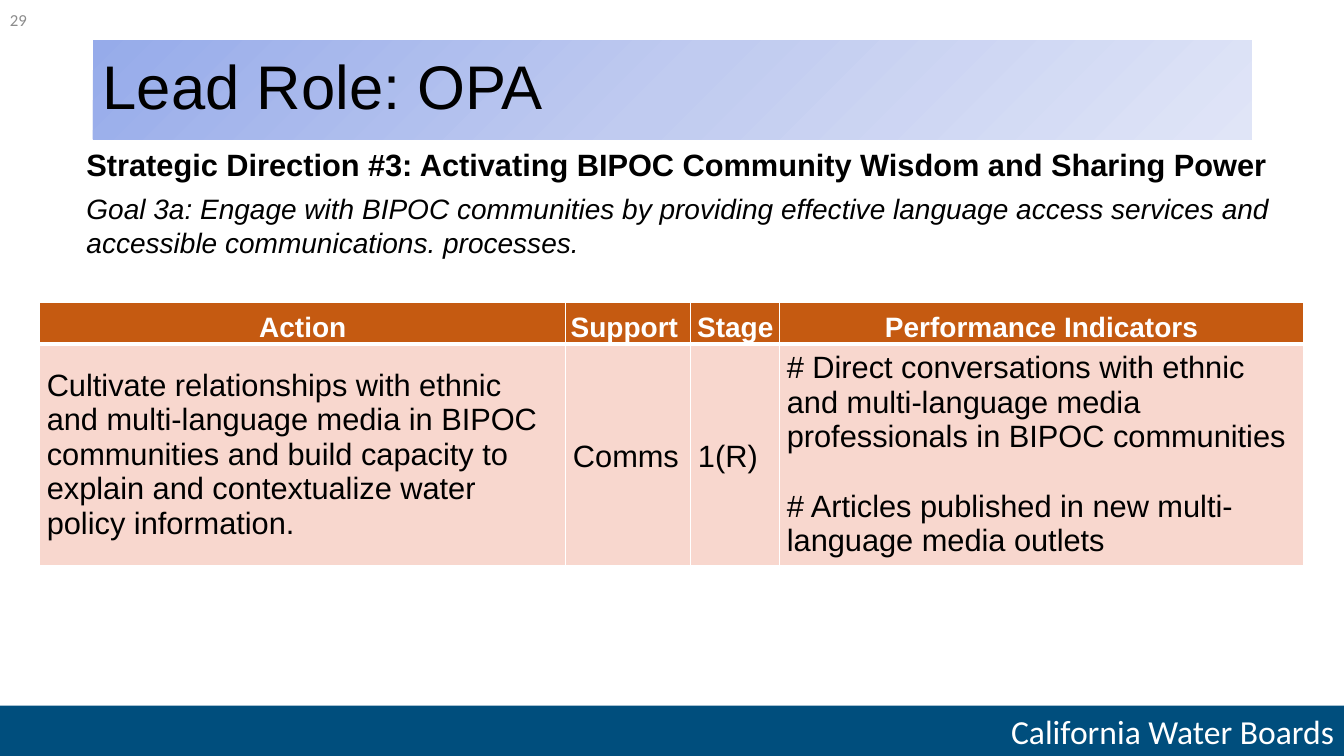
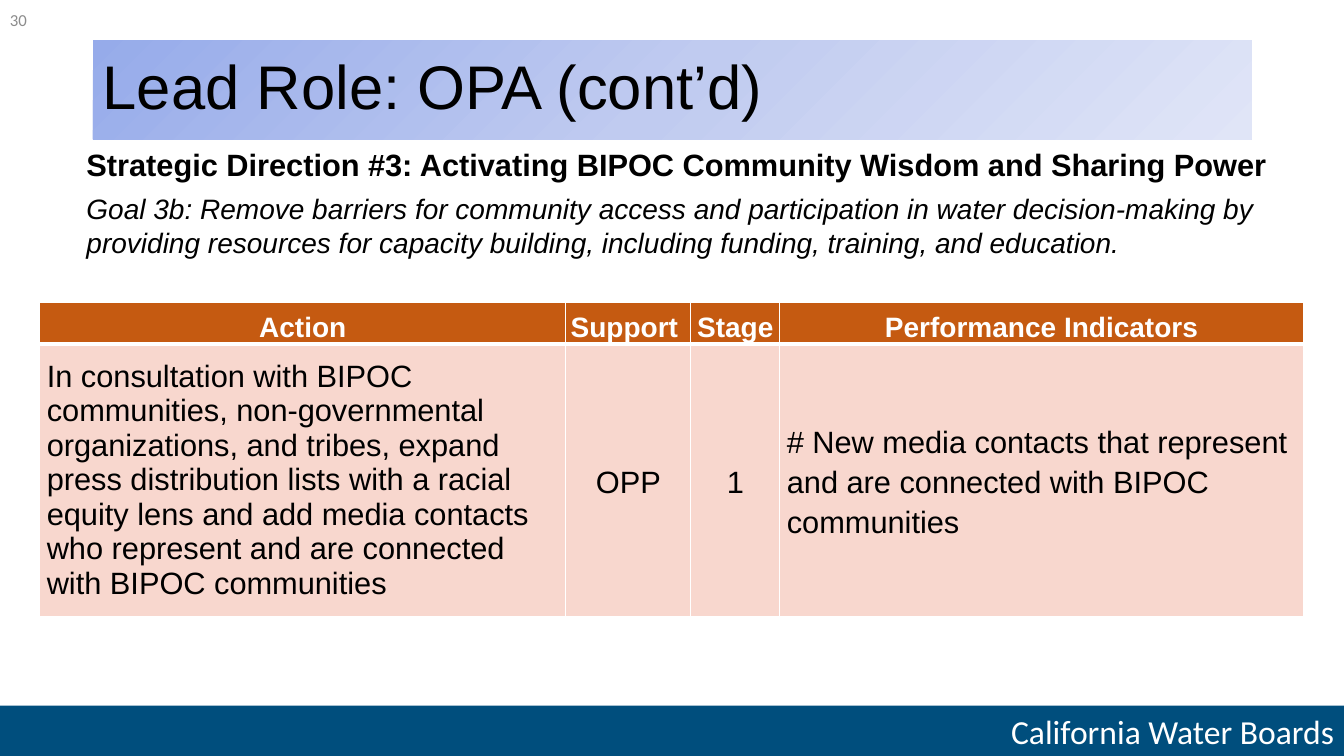
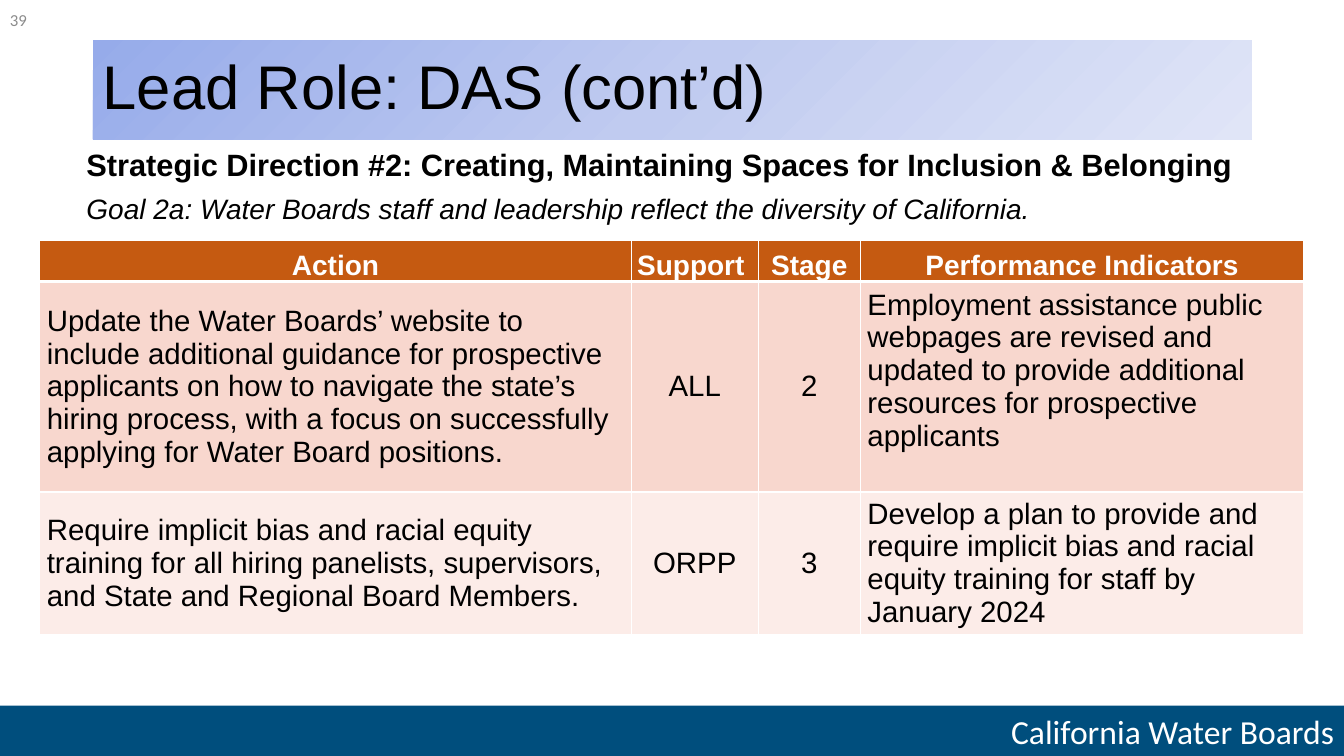
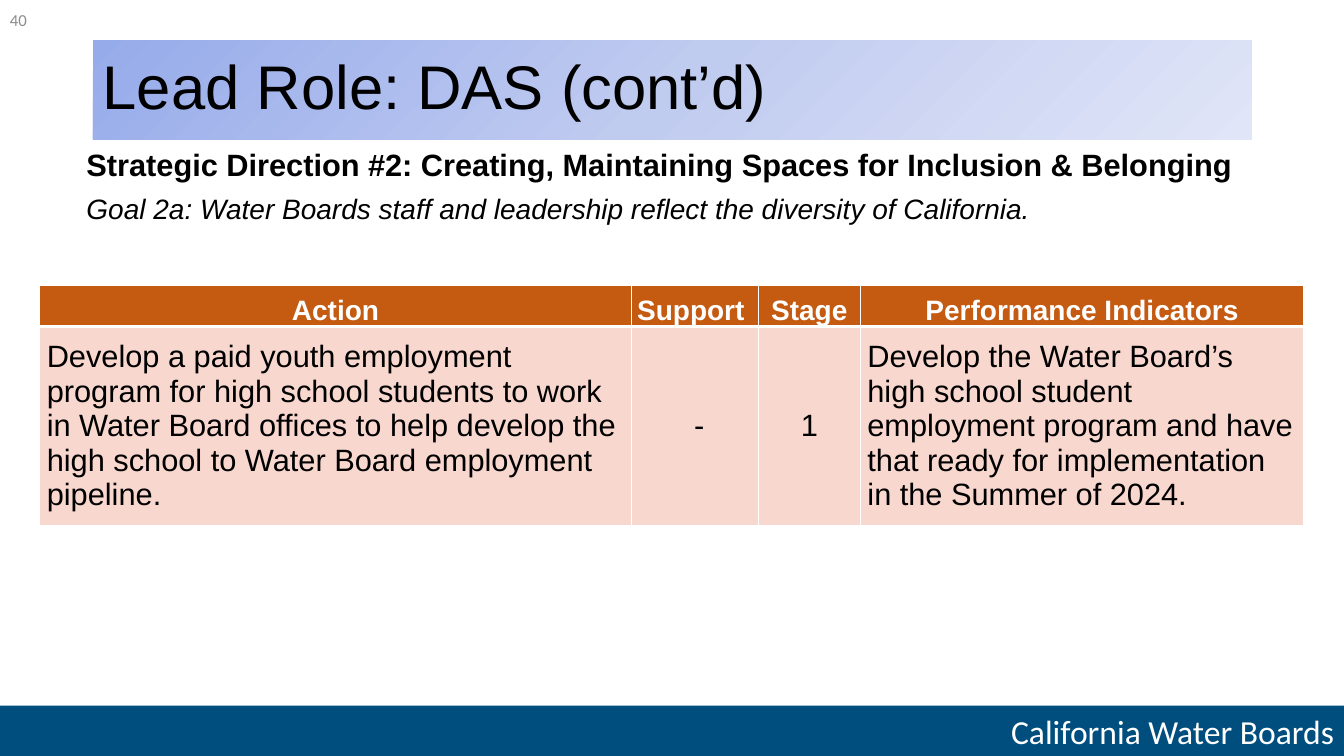
from dataclasses import dataclass

from pptx import Presentation
from pptx.dml.color import RGBColor
from pptx.enum.shapes import MSO_SHAPE
from pptx.enum.text import MSO_ANCHOR, PP_ALIGN
from pptx.oxml import parse_xml
from pptx.oxml.ns import nsdecls
from pptx.util import Cm, Pt

RECT = MSO_SHAPE.RECTANGLE
LEFT, CENTER, RIGHT = PP_ALIGN.LEFT, PP_ALIGN.CENTER, PP_ALIGN.RIGHT
MIDDLE, BOTTOM, TOP = MSO_ANCHOR.MIDDLE, MSO_ANCHOR.BOTTOM, MSO_ANCHOR.TOP


@dataclass(frozen=True)
class Theme:
    head_font: str = "Arial"
    foot_font: str = "Calibri"
    black: str = "000000"
    white: str = "FFFFFF"
    grey: str = "8C8C8C"
    navy: str = "004E7D"
    orange: str = "C55A11"
    bands: tuple = ("F8D7CE", "FCECE8")
    title_stops: tuple = ((0, "96ABEA"), (50, "C0CBF0"), (100, "E0E5F7"))
    title_size: int = 44
    footer_size: int = 24
    direction_size: int = 22
    goal_size: int = 20
    header_size: int = 20
    number_size: int = 12


T = Theme()
SLIDE_W, SLIDE_H = 33.87, 19.05
FOOTER_H = 1.27
TABLE_LEFT, HEADER_H = 1, 1.04
THIN, THICK = 1, 3
HEADERS = ("Action", "Support", "Stage", "Performance Indicators")
OPA_COLS = (13.26, 3.15, 2.24, 13.2)
DAS_COLS = (14.91, 3.2, 2.57, 11.18)
WIDE = {"line_spacing": 1.15}

DIRECTION_2 = "Strategic Direction #2: Creating, Maintaining Spaces for Inclusion & Belonging"
DIRECTION_3 = "Strategic Direction #3: Activating BIPOC Community Wisdom and Sharing Power"
GOAL_2A = "Goal 2a: Water Boards staff and leadership reflect the diversity of California."

# A cell is a text, or a tuple of paragraphs with a dict of formats
SLIDES = [
    {
        "number": 29, "title": "Lead Role: OPA", "direction": DIRECTION_3,
        "goal": "Goal 3a: Engage with BIPOC communities by providing effective language "
                "access services and accessible communications. processes.",
        "cols": OPA_COLS, "top": 7.62, "size": 22, "heights": [5.59],
        "rows": [[
            "Cultivate relationships with ethnic and multi-language media in BIPOC "
            "communities and build capacity to explain and contextualize water policy "
            "information.",
            (["Comms"], {**WIDE, "alignment": LEFT}),
            (["1(R)"], {**WIDE, "alignment": LEFT}),
            (["# Direct conversations with ethnic and multi-language media "
              "professionals in BIPOC communities",
              "# Articles published in new multi-language media outlets"], {}),
        ]],
    },
    {
        "number": 30, "title": "Lead Role: OPA (cont’d)", "direction": DIRECTION_3,
        "goal": "Goal 3b: Remove barriers for community access and participation in water "
                "decision-making by providing resources for capacity building, including "
                "funding, training, and education.",
        "cols": OPA_COLS, "top": 7.62, "size": 22, "heights": [6.86],
        "rows": [[
            "In consultation with BIPOC communities, non-governmental organizations, and "
            "tribes, expand press distribution lists with a racial equity lens and add "
            "media contacts who represent and are connected with BIPOC communities",
            (["OPP"], WIDE),
            (["1"], WIDE),
            (["# New media contacts that represent and are connected with BIPOC "
              "communities"], WIDE),
        ]],
    },
    {
        "number": 39, "title": "Lead Role: DAS (cont’d)", "direction": DIRECTION_2,
        "goal": GOAL_2A,
        "cols": DAS_COLS, "top": 6.05, "size": 21, "heights": [5.31, 3.58],
        "rows": [[
            "Update the Water Boards’ website to include additional guidance for "
            "prospective applicants on how to navigate the state’s hiring process, with a "
            "focus on successfully applying for Water Board positions.",
            "ALL", "2",
            (["Employment assistance public webpages are revised and updated to provide "
              "additional resources for prospective applicants"], {"margin_bottom": 0.82}),
        ], [
            "Require implicit bias and racial equity training for all hiring panelists, "
            "supervisors, and State and Regional Board Members.",
            "ORPP", "3",
            "Develop a plan to provide and require implicit bias and racial equity "
            "training for staff by January 2024",
        ]],
    },
    {
        "number": 40, "title": "Lead Role: DAS (cont’d)", "direction": DIRECTION_2,
        "goal": GOAL_2A,
        "cols": DAS_COLS, "top": 7.19, "size": 22, "heights": [5],
        "rows": [[
            "Develop a paid youth employment program for high school students to work in "
            "Water Board offices to help develop the high school to Water Board employment "
            "pipeline.",
            (["-"], {"margin_left": 0.4}), "1",
            "Develop the Water Board’s high school student employment program and have "
            "that ready for implementation in the Summer of 2024.",
        ]],
    },
]


def set_all(obj, values):
    for name, value in values.items():
        setattr(obj, name, value)


def rgb(color):
    return RGBColor.from_string(color)


def write(p, text, size, color, font=T.head_font, bold=False, italic=False, **layout):
    set_all(p, layout)
    r = p.add_run()
    r.text = text
    set_all(r.font, {"size": Pt(size), "name": font, "bold": bold, "italic": italic})
    r.font.color.rgb = rgb(color)


def add_text(s, box, anchor):
    tf = s.shapes.add_textbox(*map(Cm, box)).text_frame
    set_all(tf, {"word_wrap": True, "vertical_anchor": anchor})
    return tf


def add_band(s, box):
    sp = s.shapes.add_shape(RECT, *map(Cm, box))
    sp.shadow.inherit = False
    sp.line.fill.background()
    set_all(sp.text_frame, {"word_wrap": True, "vertical_anchor": MIDDLE})
    return sp


def add_frame(s, number):
    """Footer band and slide number."""
    sp = add_band(s, (0, SLIDE_H - FOOTER_H, SLIDE_W, FOOTER_H))
    sp.fill.solid()
    sp.fill.fore_color.rgb = rgb(T.navy)
    write(sp.text_frame.paragraphs[0], "California Water Boards", T.footer_size, T.white,
          T.foot_font, alignment=RIGHT)
    tf = add_text(s, (0, 0, 7.62, 1.02), MIDDLE)
    write(tf.paragraphs[0], str(number), T.number_size, T.grey, T.foot_font)


def add_title(s, title):
    sp = add_band(s, (2.34, 1.02, 29.21, 2.49))
    stops = "".join(f'<a:gs pos="{pos * 1000}"><a:srgbClr val="{color}"/></a:gs>'
                    for pos, color in T.title_stops)
    gradient = parse_xml(f'<a:gradFill {nsdecls("a")} rotWithShape="1"><a:gsLst>{stops}'
                         '</a:gsLst><a:lin ang="2700000" scaled="0"/></a:gradFill>')
    sp.element.spPr.insert(2, gradient)  # after position and geometry
    write(sp.text_frame.paragraphs[0], title, T.title_size, T.black,
          alignment=LEFT, line_spacing=0.9)


def add_intro(s, direction, goal):
    tf = add_text(s, (1.93, 3.56, 30.94, 3.12), TOP)
    write(tf.paragraphs[0], direction, T.direction_size, T.black, bold=True,
          space_after=Pt(6))
    write(tf.add_paragraph(), goal, T.goal_size, T.black, italic=True, space_after=Pt(6))


def style_cell(cell, fill, anchor, margins, top=THIN, bottom=THIN):
    """Fill, margins in cm (left, top, right, bottom) and white borders."""
    names = ("margin_left", "margin_top", "margin_right", "margin_bottom")
    set_all(cell, {name: Cm(m) for name, m in zip(names, margins)})
    cell.vertical_anchor = anchor
    tc_pr = cell._tc.get_or_add_tcPr()
    for side, width in (("L", THIN), ("R", THIN), ("T", top), ("B", bottom)):
        tc_pr.append(parse_xml(
            f'<a:ln{side} {nsdecls("a")} w="{Pt(width)}"><a:solidFill>'
            f'<a:srgbClr val="{T.white}"/></a:solidFill></a:ln{side}>'))
    cell.fill.solid()
    cell.fill.fore_color.rgb = rgb(fill)


def fill_cell(cell, content, col, size):
    paragraphs, formats = ([content], {}) if isinstance(content, str) else content
    layout = {"alignment": CENTER if col in (1, 2) else LEFT, **formats}
    for name in ("margin_left", "margin_bottom"):
        if name in layout:
            setattr(cell, name, Cm(layout.pop(name)))
    tf = cell.text_frame
    for i, text in enumerate(paragraphs):
        p = tf.add_paragraph() if i else tf.paragraphs[0]
        if i:
            p.space_before = Pt(size * 1.15)  # one line of gap
        write(p, text, size, T.black, **layout)


def add_actions(s, cols, top, size, heights, rows):
    heights = [HEADER_H, *heights]
    tbl = s.shapes.add_table(len(heights), len(cols), Cm(TABLE_LEFT), Cm(top),
                             Cm(sum(cols)), Cm(sum(heights))).table
    tbl.horz_banding = False
    for column, width in zip(tbl.columns, cols):
        column.width = Cm(width)
    for row, height in zip(tbl.rows, heights):
        row.height = Cm(height)
    # Header row
    for col, text in enumerate(HEADERS):
        right = 0.22 if text == "Support" else 0.02
        cell = tbl.cell(0, col)
        style_cell(cell, T.orange, BOTTOM, (0.02, 0.02, right, 0), bottom=THICK)
        write(cell.text_frame.paragraphs[0], text, T.header_size, T.white, bold=True,
              alignment=CENTER)
    # Body rows
    for i, row in enumerate(rows):
        for col, content in enumerate(row):
            pad = 0.18 if col < 2 else 0
            cell = tbl.cell(i + 1, col)
            style_cell(cell, T.bands[i % 2], MIDDLE, (0.18, pad, 0.18, pad),
                       top=THIN if i else THICK)
            fill_cell(cell, content, col, size)


def main():
    prs = Presentation()
    set_all(prs, {"slide_width": Cm(SLIDE_W), "slide_height": Cm(SLIDE_H)})
    for d in SLIDES:
        s = prs.slides.add_slide(prs.slide_layouts[6])
        add_frame(s, d["number"])
        add_title(s, d["title"])
        add_intro(s, d["direction"], d["goal"])
        add_actions(s, d["cols"], d["top"], d["size"], d["heights"], d["rows"])
    prs.save("out.pptx")


if __name__ == "__main__":
    main()
